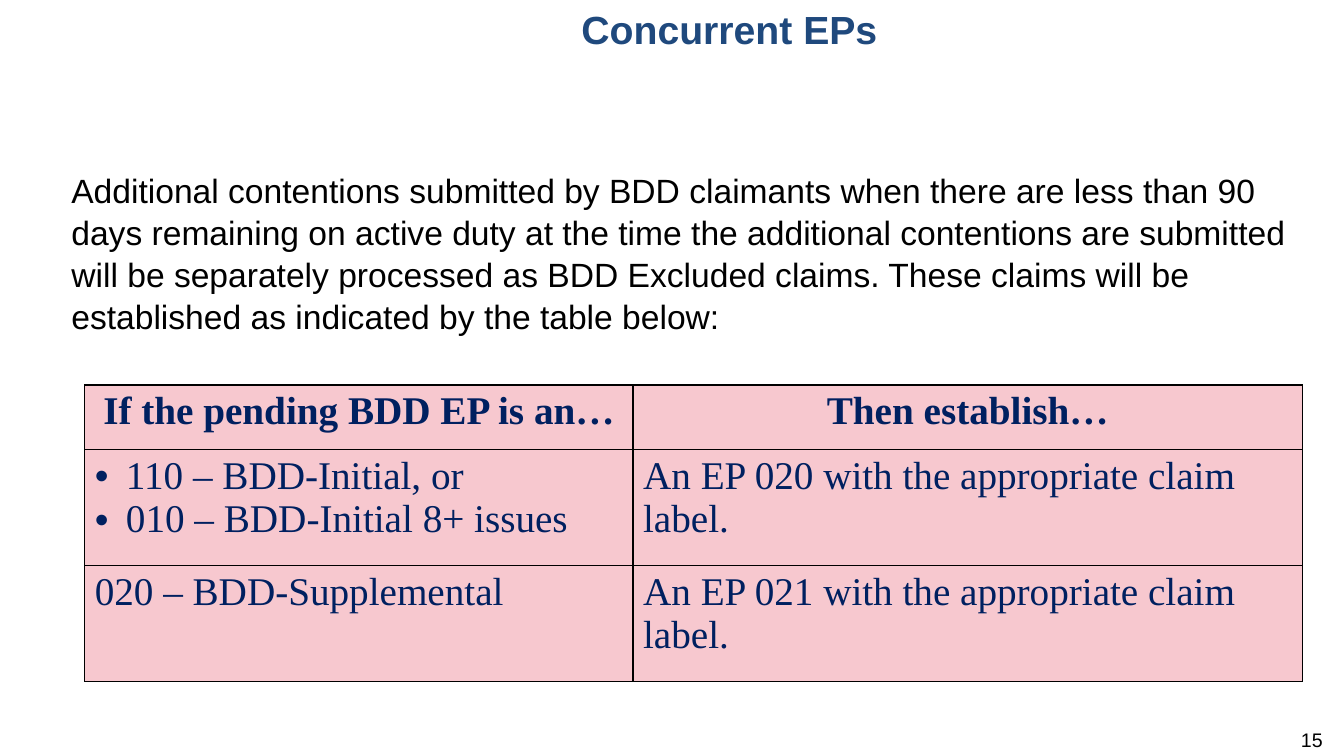
from dataclasses import dataclass

from pptx import Presentation
from pptx.dml.color import RGBColor
from pptx.enum.text import PP_ALIGN as Align
from pptx.oxml import parse_xml
from pptx.oxml.ns import nsdecls
from pptx.slide import Slide
from pptx.table import _Cell as Cell
from pptx.text.text import _Paragraph as Paragraph
from pptx.util import Pt


@dataclass(frozen=True)
class Theme:
    sans: str = "Arial"
    serif: str = "Times New Roman"
    title: str = "1F497D"
    text: str = "000000"
    table_text: str = "002060"
    table_fill: str = "F7C8CF"
    border: str = "000000"
    title_size: float = 28
    body_size: float = 24
    table_size: float = 28
    number_size: float = 14


@dataclass(frozen=True)
class Label:
    text: str
    left: float
    top: float
    width: float
    height: float
    size: float
    color: str
    bold: bool = False
    align: Align = Align.LEFT
    inset: float = 3.6
    spacing: float = 1.0


@dataclass(frozen=True)
class Entry:
    lines: tuple[str, ...]
    header: bool = False
    bullets: bool = False


THEME = Theme()
LABELS = (
    Label("Concurrent EPs", 148.5, 0, 745, 90.7, THEME.title_size, THEME.title,
          bold=True, align=Align.CENTER),
    Label("Additional contentions submitted by BDD claimants when there are less than 90 "
          "days remaining on active duty at the time the additional contentions are "
          "submitted will be separately processed as BDD Excluded claims. These claims "
          "will be established as indicated by the table below:",
          43.9, 116.6, 903, 140, THEME.body_size, THEME.text, spacing=1.04),
    Label("15", 728, 519.8, 224, 20, THEME.number_size, THEME.text,
          align=Align.RIGHT, inset=0),
)
COLUMNS = (391.7, 478.1)
ROWS = (46.1, 82.8, 82.8)
ENTRIES = (
    (Entry(("If the pending BDD EP is an…",), header=True),
     Entry(("Then establish…",), header=True)),
    (Entry(("110 – BDD-Initial, or", "010 – BDD-Initial 8+ issues"), bullets=True),
     Entry(("An EP 020 with the appropriate claim label.",))),
    (Entry(("020 – BDD-Supplemental",)),
     Entry(("An EP 021 with the appropriate claim label.",))),
)


def style(p: Paragraph, font: str, size: float, color: str, bold: bool) -> None:
    """Format every run of a paragraph."""
    for r in p.runs:
        r.font.name = font
        r.font.size = Pt(size)
        r.font.bold = bold
        r.font.color.rgb = RGBColor.from_string(color)


def add_label(s: Slide, label: Label) -> None:
    """Add a wrapped text box."""
    sp = s.shapes.add_textbox(Pt(label.left), Pt(label.top), Pt(label.width), Pt(label.height))
    tf = sp.text_frame
    tf.word_wrap = True
    tf.margin_top = Pt(label.inset)
    tf.text = label.text
    p = tf.paragraphs[0]
    p.alignment = label.align
    p.line_spacing = label.spacing
    style(p, THEME.sans, label.size, label.color, label.bold)


def add_bullet(p: Paragraph, indent: float) -> None:
    """Give a paragraph a hanging round bullet."""
    pPr = p._p.get_or_add_pPr()
    pPr.set("marL", str(Pt(indent)))
    pPr.set("indent", str(-Pt(indent)))
    pPr.append(parse_xml(f'<a:buFont {nsdecls("a")} typeface="{THEME.sans}"/>'))
    pPr.append(parse_xml(f'<a:buChar {nsdecls("a")} char="•"/>'))


def add_borders(cell: Cell) -> None:
    """Draw a thin line on all four sides of a cell."""
    tcPr = cell._tc.get_or_add_tcPr()
    for i, side in enumerate(("lnL", "lnR", "lnT", "lnB")):
        tcPr.insert(i, parse_xml(
            f'<a:{side} {nsdecls("a")} w="{Pt(1)}"><a:solidFill>'
            f'<a:srgbClr val="{THEME.border}"/></a:solidFill></a:{side}>'))


def fill_cell(cell: Cell, entry: Entry) -> None:
    """Write and format one table cell."""
    cell.fill.solid()
    cell.fill.fore_color.rgb = RGBColor.from_string(THEME.table_fill)
    add_borders(cell)
    tf = cell.text_frame
    tf.text = "\n".join(entry.lines)
    for p in tf.paragraphs:
        p.alignment = Align.CENTER if entry.header else Align.LEFT
        if entry.bullets:
            add_bullet(p, 22.3)
        style(p, THEME.serif, THEME.table_size, THEME.table_text, entry.header)


def add_claims_table(s: Slide) -> None:
    """Add the table of pending and new EPs."""
    table = s.shapes.add_table(len(ROWS), len(COLUMNS), Pt(60.5), Pt(275),
                               Pt(sum(COLUMNS)), Pt(sum(ROWS))).table
    for column, width in zip(table.columns, COLUMNS):
        column.width = Pt(width)
    for row, height, entries in zip(table.rows, ROWS, ENTRIES):
        row.height = Pt(height)
        for cell, entry in zip(row.cells, entries):
            fill_cell(cell, entry)


def main() -> None:
    """Build and save the slide."""
    prs = Presentation()
    prs.slide_width, prs.slide_height = Pt(960), Pt(540)
    s = prs.slides.add_slide(prs.slide_layouts[6])
    for label in LABELS:
        add_label(s, label)
    add_claims_table(s)
    prs.save("out.pptx")


if __name__ == "__main__":
    main()
